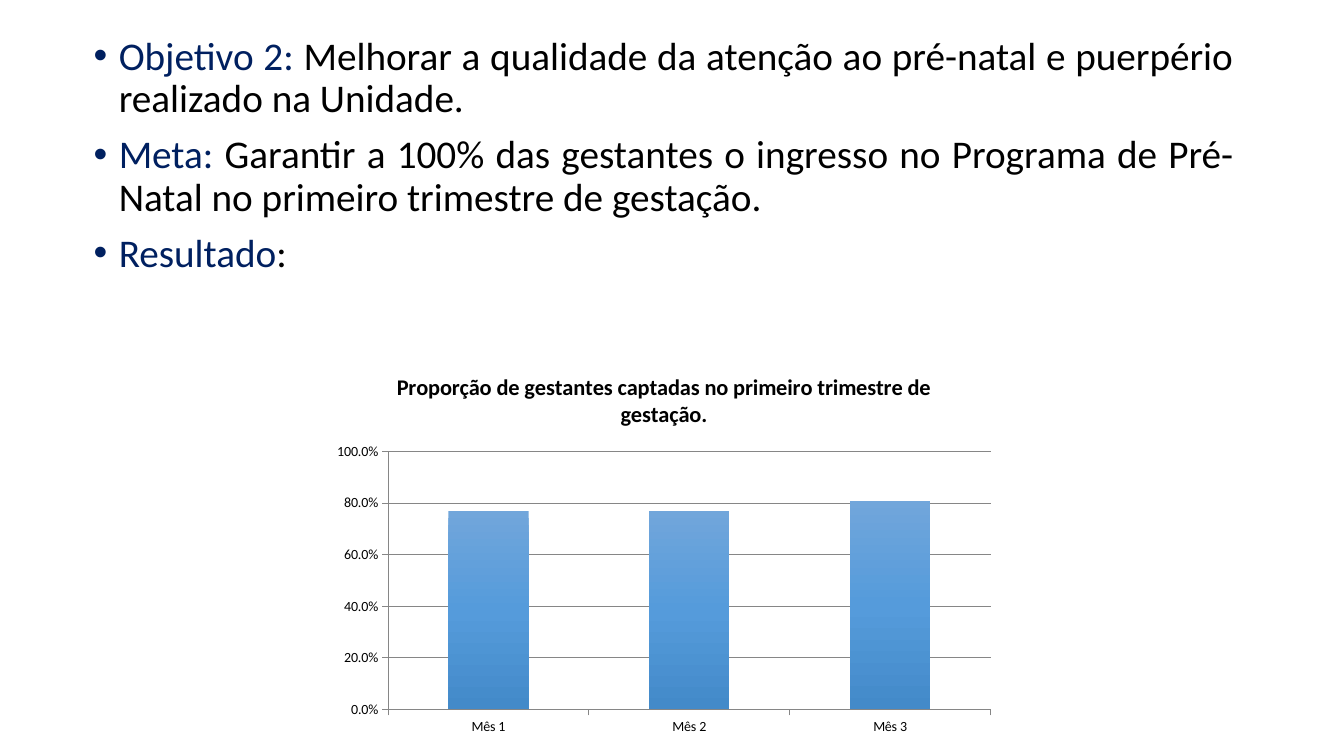
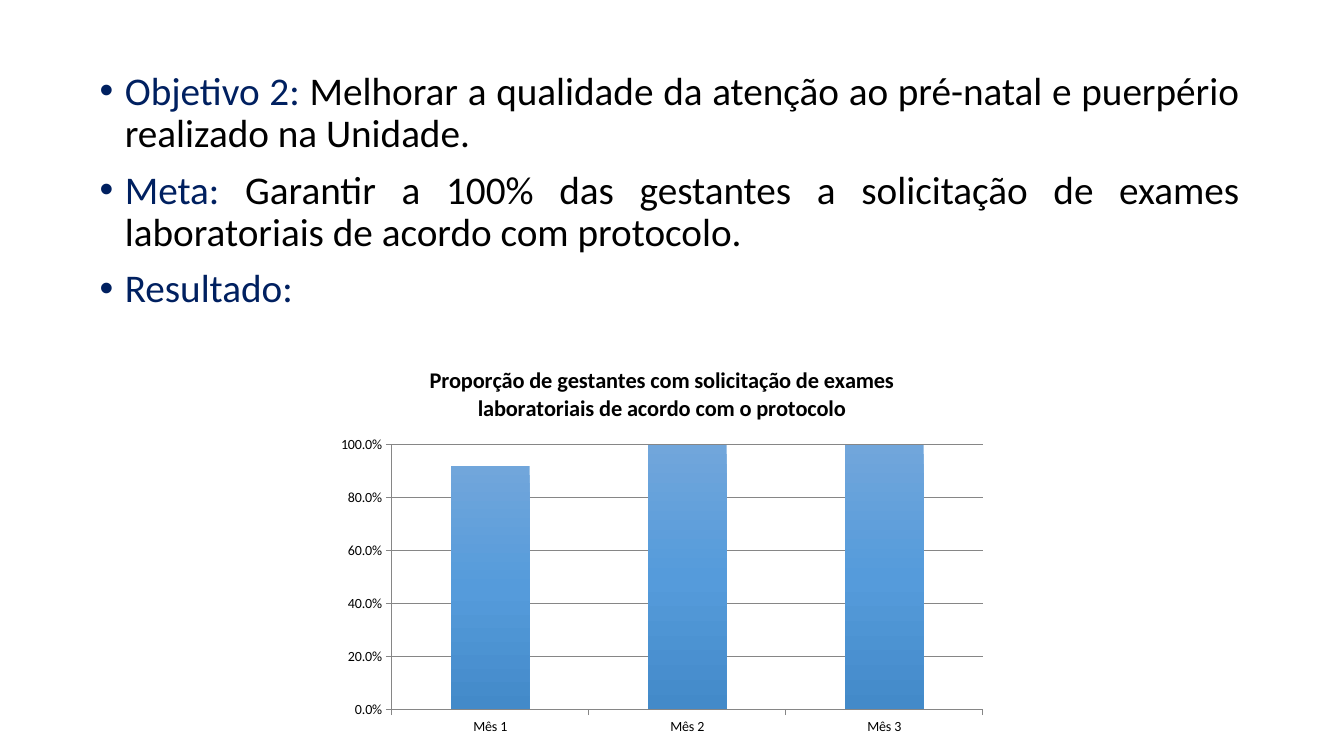
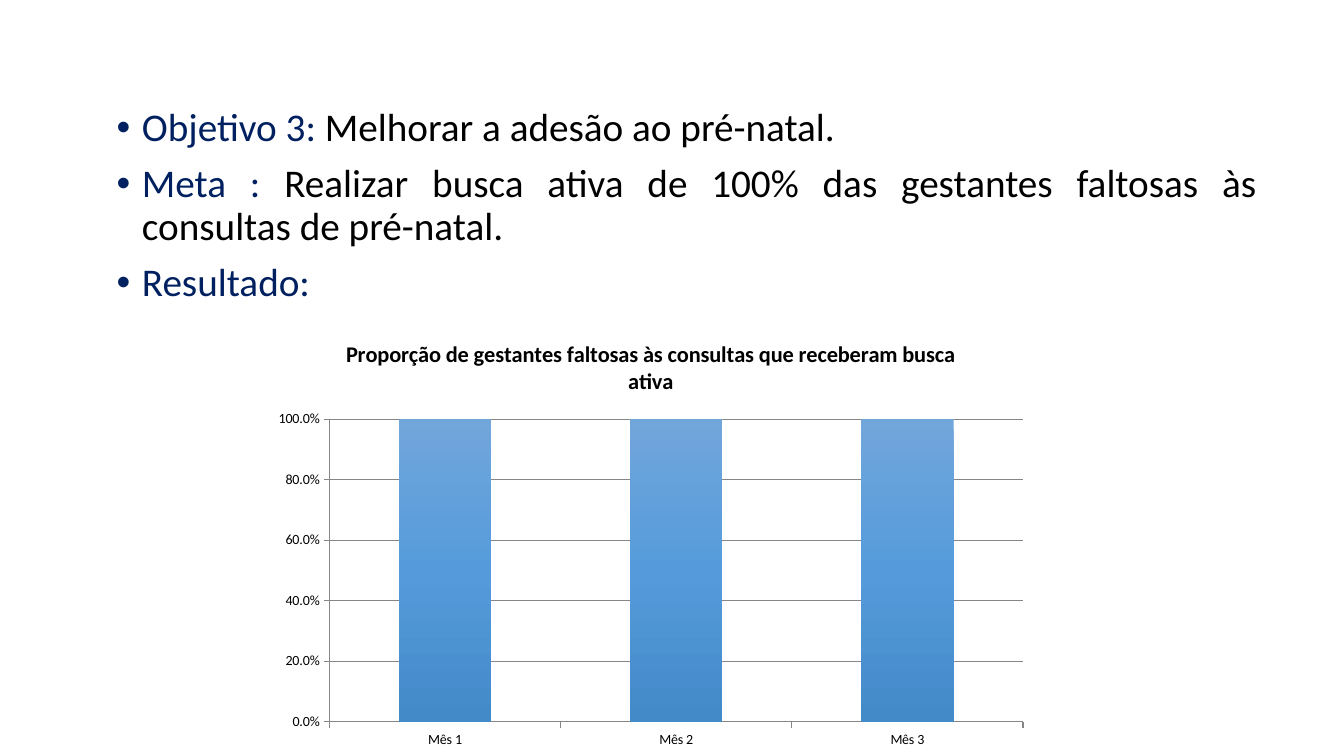
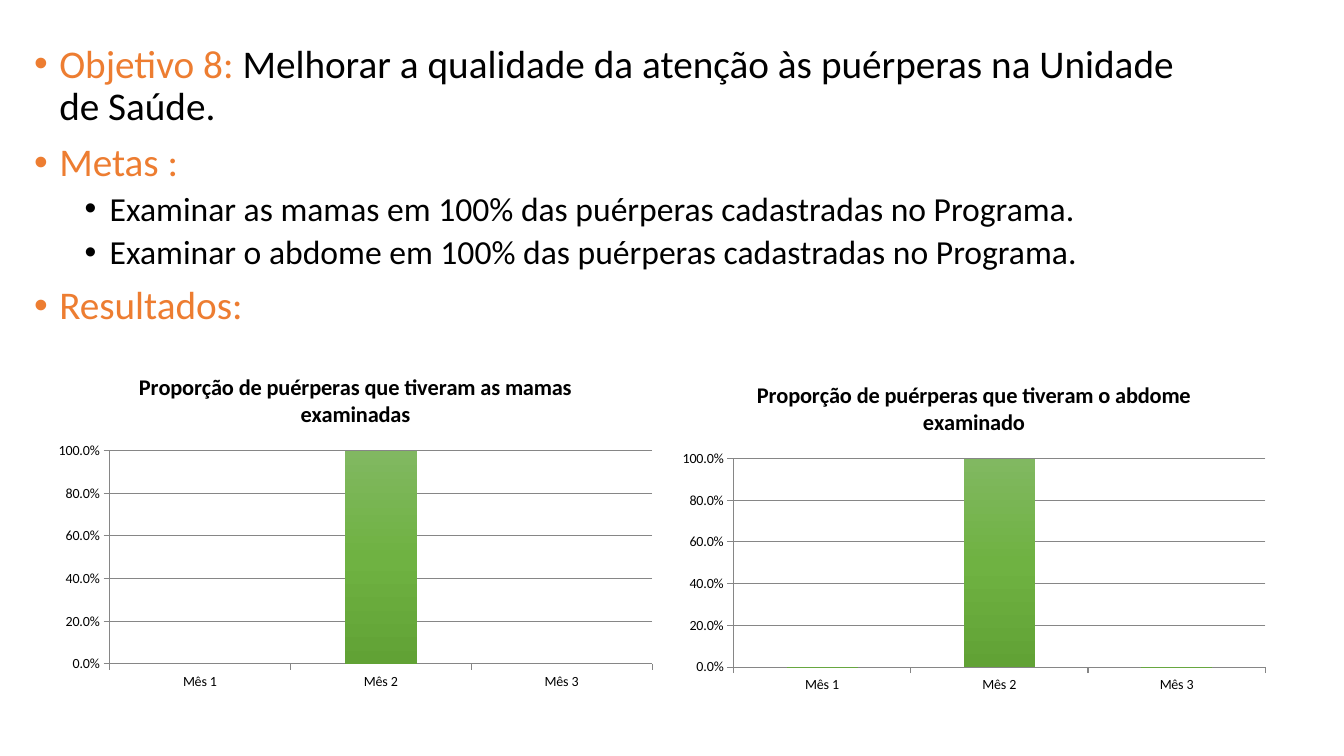
"""Build four slides of goals and results in prenatal care."""
import copy
from dataclasses import dataclass

import pptx
import pptx.chart.data
import pptx.dml.color
import pptx.enum.chart
import pptx.enum.text
import pptx.oxml.ns
import pptx.util
from lxml import etree

Inch = pptx.util.Inches
Pt = pptx.util.Pt
qn = pptx.oxml.ns.qn
hue = pptx.dml.color.RGBColor.from_string


@dataclass(frozen=True)
class Theme:
    """Colours, type sizes and measures that all slides share."""
    font: str = "Calibri"
    ink: str = "000000"
    navy: str = "002060"
    orange: str = "ED7D31"
    grid: str = "868686"
    blue: tuple = ("71A6DB", "559BDB", "438AC9")
    green: tuple = ("81B861", "6FB242", "61A235")
    sizes: tuple = (28, 24)
    gaps: tuple = (10, 5)
    title: int = 16
    label: int = 10
    step: float = 0.25
    width: float = 11.5


T = Theme()
MONTHS = ("Mês 1", "Mês 2", "Mês 3")
CARE = ("Objetivo 2: ", "Melhorar a qualidade da atenção ao pré-natal e puerpério realizado na Unidade.")

SLIDES = [
    dict(
        text=(0.83, 0.31, 2.86), key=T.navy, bars=T.blue,
        lines=[
            CARE,
            ("Meta: ", "Garantir a 100% das gestantes o ingresso no Programa de Pré-Natal no primeiro trimestre de gestação."),
            ("Resultado", ":"),
        ],
        charts=[
            ("Proporção de gestantes captadas no primeiro trimestre de gestação.",
             (0.77, 0.77, 0.81), (3.21, 3.52, 6.75, 3.85)),
        ],
    ),
    dict(
        text=(0.89, 0.66, 4.76), key=T.navy, bars=T.blue,
        lines=[
            CARE,
            ("Meta: ", "Garantir a 100% das gestantes a solicitação de exames laboratoriais de acordo com protocolo."),
            ("Resultado:", ""),
        ],
        charts=[
            ("Proporção de gestantes com solicitação de exames laboratoriais de acordo com o protocolo",
             (0.92, 1, 1), (3.25, 3.45, 6.63, 3.92)),
        ],
    ),
    dict(
        text=(1.06, 1.02, 4.76), key=T.navy, bars=T.blue,
        lines=[
            ("Objetivo 3: ", "Melhorar a adesão ao pré-natal."),
            ("Meta : ", "Realizar busca ativa de 100% das gestantes faltosas às consultas de pré-natal."),
            ("Resultado:", ""),
        ],
        charts=[
            ("Proporção de gestantes faltosas às consultas que receberam busca ativa",
             (1, 1, 1), (2.61, 3.18, 7.69, 4.32)),
        ],
    ),
    dict(
        text=(0.24, 0.39, 4.76), key=T.orange, bars=T.green,
        lines=[
            ("Objetivo 8: ", "Melhorar a qualidade da atenção às puérperas na Unidade de Saúde."),
            ("Metas :", ""),
            ("", "Examinar as mamas em 100% das puérperas cadastradas no Programa."),
            ("", "Examinar o abdome em 100% das puérperas cadastradas no Programa."),
            ("Resultados:", ""),
        ],
        charts=[
            ("Proporção de puérperas que tiveram as mamas examinadas",
             (0, 1, 0), (0.46, 3.53, 6.13, 3.38)),
            ("Proporção de puérperas que tiveram o abdome examinado",
             (0, 1, 0), (6.65, 3.61, 6.02, 3.33)),
        ],
    ),
]


def style(font, size, bold=False):
    """Give a font the shared face and ink at one size."""
    font.name, font.size, font.bold = T.font, Pt(size), bold
    font.color.rgb = hue(T.ink)


def bullet(para, level):
    """Hang a round bullet at the indent of its level."""
    props = para._p.get_or_add_pPr()
    props.set("marL", str(Inch(T.step * (1 + 2 * level))))
    props.set("indent", str(-Inch(T.step)))
    etree.SubElement(props, qn("a:buFont")).set("typeface", "Arial")
    etree.SubElement(props, qn("a:buChar")).set("char", "•")


def write(slide, place, lines, key):
    """Write the bullet list with its coloured lead words."""
    left, top, height = place
    box = slide.shapes.add_textbox(Inch(left), Inch(top), Inch(T.width), Inch(height))
    frame = box.text_frame
    frame.word_wrap = True
    for num, (lead, rest) in enumerate(lines):
        para = frame.add_paragraph() if num else frame.paragraphs[0]
        level = 0 if lead else 1
        para.level = level
        bullet(para, level)
        para.alignment = pptx.enum.text.PP_ALIGN.JUSTIFY
        para.line_spacing = 0.9
        para.space_before = Pt(T.gaps[level])
        style(para.font, T.sizes[level])
        for words, tint in ((lead, key), (rest, T.ink)):
            if words:
                run = para.add_run()
                run.text = words
                run.font.color.rgb = hue(tint)


def shade(series, tints):
    """Fill the bars with a gradient from top to bottom."""
    fill = series.format.fill
    fill.gradient()
    fill.gradient_angle = 270
    stops = next(series._element.iter(qn("a:gsLst")))
    stops.insert(1, copy.deepcopy(stops[0]))
    for num, (stop, tint) in enumerate(zip(fill.gradient_stops, tints)):
        stop.position = num / (len(tints) - 1)
        stop.color.rgb = hue(tint)


def rule(line):
    """Draw a thin grey chart line."""
    line.color.rgb = hue(T.grid)
    line.width = Pt(0.75)


def plot(slide, title, vals, place, tints):
    """Add a column chart of monthly shares."""
    kinds = pptx.enum.chart
    data = pptx.chart.data.CategoryChartData(number_format="0.0%")
    data.categories = MONTHS
    data.add_series(title, vals)
    chart = slide.shapes.add_chart(
        kinds.XL_CHART_TYPE.COLUMN_CLUSTERED, *map(Inch, place), data).chart
    style(chart.font, T.label)
    chart.has_legend = False
    chart.has_title = True
    head = chart.chart_title
    head.include_in_layout = False
    head.text_frame.text = title
    style(head.text_frame.paragraphs[0].font, T.title, True)
    bars = chart.plots[0]
    bars.gap_width, bars.vary_by_categories = 150, False
    shade(bars.series[0], tints)
    axis = chart.value_axis
    axis.minimum_scale, axis.maximum_scale, axis.major_unit = 0, 1, 0.2
    axis.tick_labels.number_format = "0.0%"
    axis.tick_labels.number_format_is_linked = False
    axis.has_major_gridlines = True
    rule(axis.major_gridlines.format.line)
    for side in (axis, chart.category_axis):
        side.major_tick_mark = kinds.XL_TICK_MARK.OUTSIDE
        side.minor_tick_mark = kinds.XL_TICK_MARK.NONE
        rule(side.format.line)


def main():
    """Build and save the deck."""
    deck = pptx.Presentation()
    deck.slide_width, deck.slide_height = Inch(13.33), Inch(7.5)
    for page in SLIDES:
        slide = deck.slides.add_slide(deck.slide_layouts[6])
        write(slide, page["text"], page["lines"], page["key"])
        for title, vals, place in page["charts"]:
            plot(slide, title, vals, place, page["bars"])
    deck.save("out.pptx")


if __name__ == "__main__":
    main()
